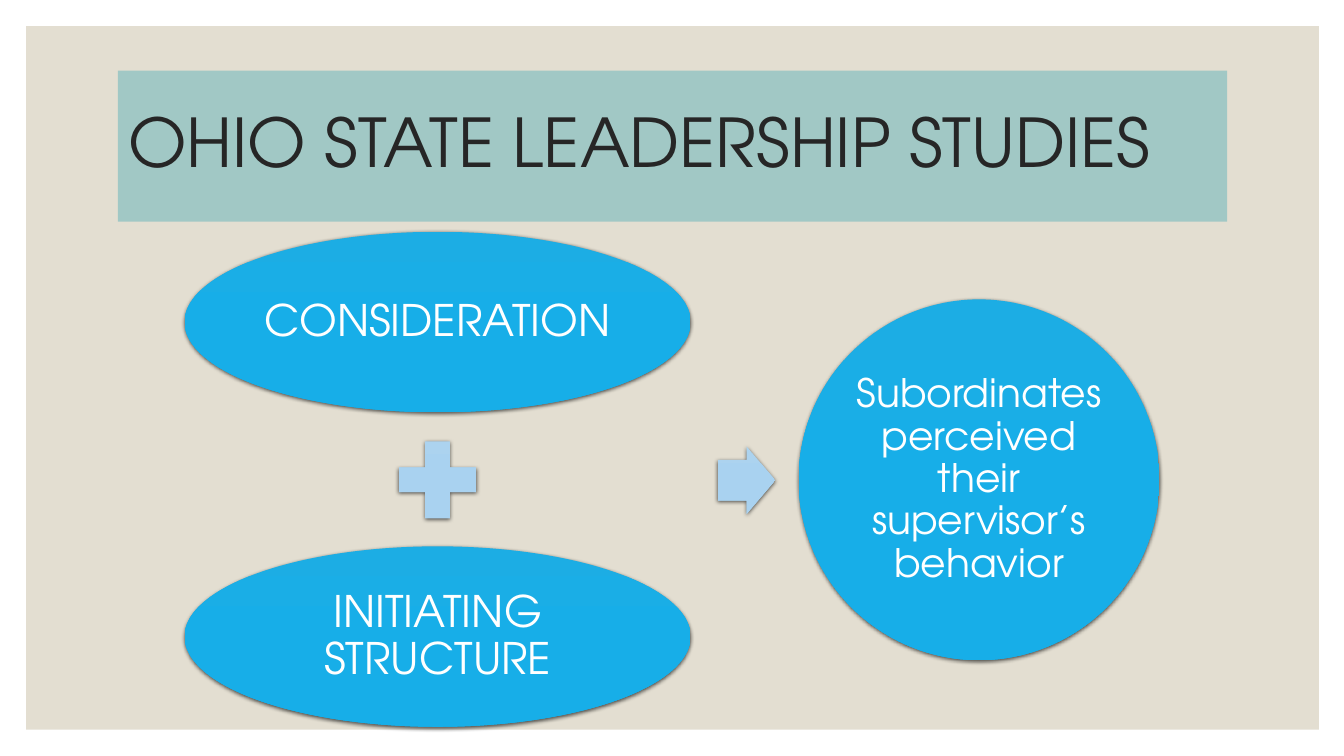
import dataclasses
import typing

import lxml.etree
import pptx
import pptx.dml.color
import pptx.enum.shapes
import pptx.enum.text
import pptx.oxml.ns
import pptx.util

Inches = pptx.util.Inches
Kind = pptx.enum.shapes.MSO_SHAPE
Align = pptx.enum.text.PP_ALIGN

FONT = "TeX Gyre Adventor"
COLORS = {
    "panel": "E3DED1",
    "band": "A1C8C5",
    "title": "262626",
    "text": "FFFFFF",
    "shadow": "000000",
    "oval top": "1CADE4",
    "oval base": "17AEE8",
    "sign top": "ACD3EF",
    "sign base": "A9D2F0",
}


@dataclasses.dataclass(frozen=True)
class Node:
    kind: Kind
    tone: str
    left: float
    top: float
    width: float
    height: float
    text: str = ""
    size: int = 0
    adjust: tuple[float, ...] = ()


OVAL = {"kind": Kind.OVAL, "tone": "oval"}
FACTOR = {**OVAL, "left": 1.83, "width": 5.02, "height": 1.79, "size": 31}
NODES = [
    Node(top=2.3, text="CONSIDERATION", **FACTOR),
    Node(Kind.MATH_PLUS, "sign", 3.82, 4.24, 1.04, 1.04),
    Node(top=5.42, text="INITIATING STRUCTURE", **FACTOR),
    Node(Kind.RIGHT_ARROW, "sign", 7.12, 4.43, 0.57, 0.67, adjust=(0.6, 0.5)),
    Node(left=7.92, top=2.97, width=3.58, height=3.58, size=28,
         text="Subordinates perceived their supervisor’s behavior", **OVAL),
]


def color(name: str) -> pptx.dml.color.RGBColor:
    return pptx.dml.color.RGBColor.from_string(COLORS[name])


def paint(shape: typing.Any, name: str) -> None:
    shape.fill.solid()
    shape.fill.fore_color.rgb = color(name)
    shape.line.fill.background()


def shade(shape: typing.Any, tone: str) -> None:
    shape.fill.gradient()
    shape.fill.gradient_angle = 270
    ends = ((0, "top"), (0.5, "base"))
    for stop, (place, end) in zip(shape.fill.gradient_stops, ends):
        stop.position = place
        stop.color.rgb = color(f"{tone} {end}")
    shape.line.fill.background()


def cast(shape: typing.Any) -> None:
    shape.shadow.inherit = False
    qn = pptx.oxml.ns.qn
    effects = shape.element.spPr.find(qn("a:effectLst"))
    outer = lxml.etree.SubElement(
        effects, qn("a:outerShdw"), blurRad=str(pptx.util.Pt(3)),
        dist=str(pptx.util.Pt(1)), dir="5400000", algn="ctr", rotWithShape="0")
    tint = lxml.etree.SubElement(outer, qn("a:srgbClr"), val=COLORS["shadow"])
    lxml.etree.SubElement(tint, qn("a:alpha"), val="63000")


def write(shape: typing.Any, text: str, size: int, name: str, align: Align) -> None:
    frame = shape.text_frame
    frame.text = text
    frame.word_wrap = True
    frame.auto_size = pptx.enum.text.MSO_AUTO_SIZE.NONE
    frame.vertical_anchor = pptx.enum.text.MSO_ANCHOR.MIDDLE
    line = frame.paragraphs[0]
    line.alignment = align
    line.line_spacing = 0.9
    line.font.name = FONT
    line.font.size = pptx.util.Pt(size)
    line.font.color.rgb = color(name)


def draw(slide: typing.Any, node: Node) -> None:
    box = map(Inches, (node.left, node.top, node.width, node.height))
    shape = slide.shapes.add_shape(node.kind, *box)
    for index, value in enumerate(node.adjust):
        shape.adjustments[index] = value
    shade(shape, node.tone)
    cast(shape)
    if node.text:
        write(shape, node.text, node.size, "text", Align.CENTER)
        frame = shape.text_frame
        frame.margin_left = frame.margin_right = Inches(0.04)
        frame.margin_top = frame.margin_bottom = Inches(0.04)


def main() -> None:
    deck = pptx.Presentation()
    deck.slide_width, deck.slide_height = Inches(13.33), Inches(7.5)
    slide = deck.slides.add_slide(deck.slide_layouts[5])

    panel = slide.shapes.add_shape(
        Kind.RECTANGLE, Inches(0.26), Inches(0.26), Inches(12.82), Inches(6.98))
    panel.shadow.inherit = False
    paint(panel, "panel")

    title = slide.shapes.title
    title.element.addprevious(panel.element)
    title.left, title.top = Inches(1.17), Inches(0.7)
    title.width, title.height = Inches(11), Inches(1.5)
    paint(title, "band")
    write(title, "OHIO STATE LEADERSHIP STUDIES", 48, "title", Align.LEFT)

    for node in NODES:
        draw(slide, node)
    deck.save("out.pptx")


if __name__ == "__main__":
    main()
